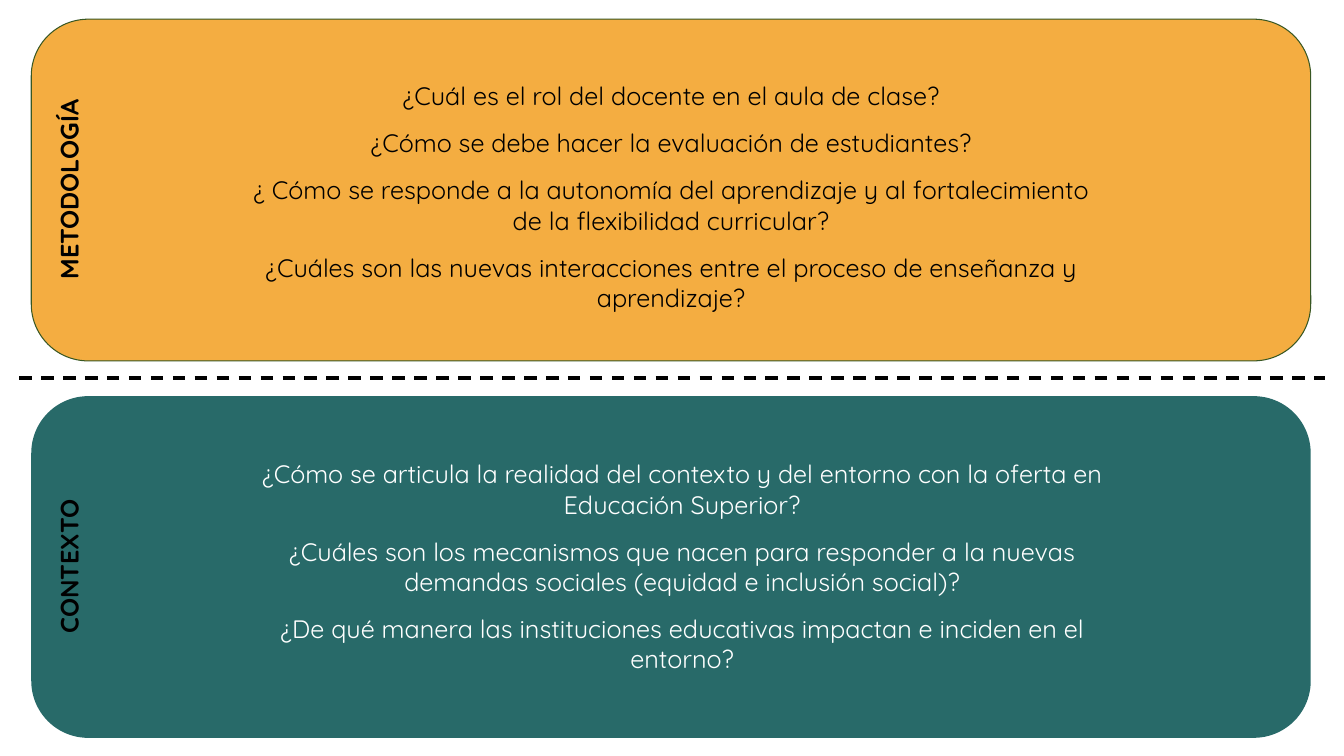
from lxml.etree import SubElement
from pptx import Presentation
from pptx.dml.color import RGBColor
from pptx.enum.dml import MSO_LINE
from pptx.enum.shapes import MSO_CONNECTOR, MSO_SHAPE
from pptx.enum.text import MSO_ANCHOR, MSO_AUTO_SIZE, PP_ALIGN
from pptx.oxml.ns import qn
from pptx.util import Inches, Pt

BLACK = RGBColor(0x00, 0x00, 0x00)
WHITE = RGBColor(0xFF, 0xFF, 0xFF)
ORANGE = RGBColor(0xF4, 0xAD, 0x41)
TEAL = RGBColor(0x28, 0x6A, 0x69)
GREEN = RGBColor(0x38, 0x57, 0x23)
FONT = "Quicksand"

SECTIONS = [
    {
        "label": "METODOLOGÍA", "fill": ORANGE, "line": GREEN, "color": BLACK,
        "top": 0.19, "label_top": 1.68, "box": (2.31, 0.75, 8.69, 2.42),
        "questions": [
            "¿Cuál es el rol del docente en el aula de clase?",
            "¿Cómo se debe hacer la evaluación de estudiantes?",
            "¿ Cómo se responde a la autonomía del aprendizaje y al "
            "fortalecimiento de la flexibilidad curricular?",
            "¿Cuáles son las nuevas interacciones entre el proceso de "
            "enseñanza y aprendizaje?",
        ],
    },
    {
        "label": "CONTEXTO", "fill": TEAL, "line": None, "color": WHITE,
        "top": 3.93, "label_top": 5.42, "box": (2.42, 4.5, 8.69, 2.26),
        "questions": [
            "¿Cómo se articula la realidad del contexto y del entorno con la "
            "oferta en Educación Superior?",
            "¿Cuáles son los mecanismos que nacen para responder a la nuevas "
            "demandas sociales (equidad e inclusión social)?",
            "¿De qué manera las instituciones educativas impactan e inciden "
            "en el entorno?",
        ],
    },
]


def add_panel(slide, section):
    """Draw the rounded panel behind a section."""
    sp = slide.shapes.add_shape(
        MSO_SHAPE.ROUNDED_RECTANGLE,
        Inches(0.31), Inches(section["top"]), Inches(12.69), Inches(3.39))
    sp.shadow.inherit = False
    sp.fill.solid()
    sp.fill.fore_color.rgb = section["fill"]
    if section["line"] is None:
        sp.line.fill.background()
    else:
        sp.line.color.rgb = section["line"]
        sp.line.width = Pt(0.75)


def add_divider(slide):
    """Draw the dashed line between the two panels."""
    line = slide.shapes.add_connector(
        MSO_CONNECTOR.STRAIGHT,
        Inches(0.19), Inches(3.75), Inches(13.14), Inches(3.75))
    line.line.color.rgb = BLACK
    line.line.width = Pt(2.25)
    line.line.dash_style = MSO_LINE.DASH
    SubElement(line.element.spPr, qn("a:effectLst"))


def fill_placeholder(slide, sp, box, texts, color, bold=False, space=0):
    """Place a body placeholder above the panels and write centred paragraphs."""
    slide.shapes.element.append(sp.element)
    sp.left, sp.top, sp.width, sp.height = [Inches(v) for v in box]
    tf = sp.text_frame
    tf.word_wrap = True
    tf.auto_size = MSO_AUTO_SIZE.SHAPE_TO_FIT_TEXT
    tf.vertical_anchor = MSO_ANCHOR.TOP
    for i, text in enumerate(texts):
        p = tf.add_paragraph() if i else tf.paragraphs[0]
        p.alignment = PP_ALIGN.CENTER
        p.space_before = p.space_after = Pt(space)
        pPr = p._p.get_or_add_pPr()
        pPr.set("marL", "0")
        pPr.set("indent", "0")
        SubElement(pPr, qn("a:buNone"))
        r = p.add_run()
        r.text = text
        r.font.name = FONT
        r.font.size = Pt(18)
        r.font.bold = bold
        r.font.color.rgb = color


def main():
    """Build the slide with the two groups of questions."""
    prs = Presentation()
    prs.slide_width, prs.slide_height = Inches(13.33), Inches(7.5)
    slide = prs.slides.add_slide(prs.slide_layouts[4])
    title, *bodies = list(slide.placeholders)[:5]
    slide.shapes.element.remove(title.element)

    for section in SECTIONS:
        add_panel(slide, section)
    add_divider(slide)
    for section, label, questions in zip(SECTIONS, bodies[::2], bodies[1::2]):
        fill_placeholder(slide, label, (-0.69, section["label_top"], 2.74, 0.4),
                         [section["label"]], BLACK, bold=True)
        label.rotation = 270
        fill_placeholder(slide, questions, section["box"],
                         section["questions"], section["color"], space=6)
    prs.save("out.pptx")


if __name__ == "__main__":
    main()
